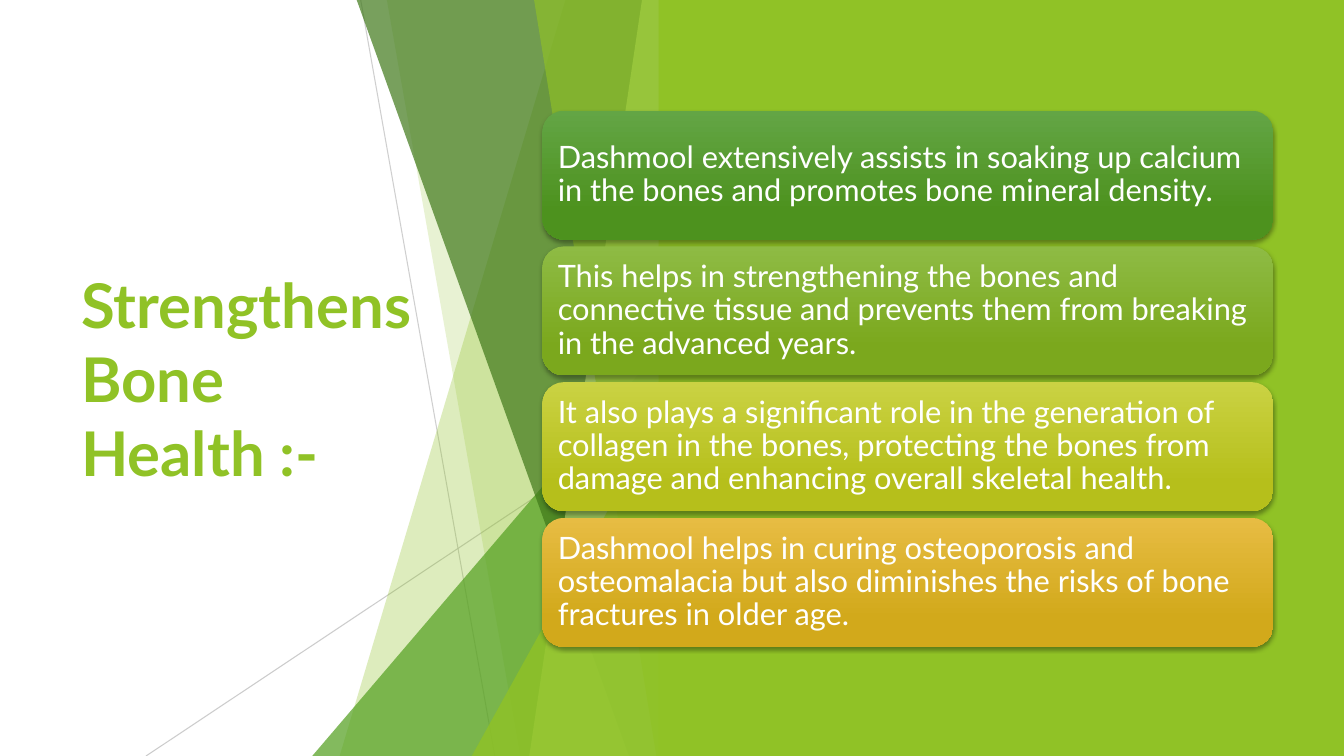
from lxml import etree
from pptx import Presentation
from pptx.dml.color import RGBColor
from pptx.enum.shapes import MSO_CONNECTOR, MSO_SHAPE
from pptx.enum.text import MSO_ANCHOR, PP_ALIGN
from pptx.oxml.ns import qn
from pptx.util import Cm, Pt

STRAIGHT = MSO_CONNECTOR.STRAIGHT
TRIANGLE = MSO_SHAPE.ISOSCELES_TRIANGLE
RECTANGLE = MSO_SHAPE.RECTANGLE
ROUNDED = MSO_SHAPE.ROUNDED_RECTANGLE
MIDDLE = MSO_ANCHOR.MIDDLE
LEFT = PP_ALIGN.LEFT
GREEN = "90C226"
WIDTH, HEIGHT = 33.87, 19.05
FACET_RIGHT = 16.92


def paint(color, value, shape=None, opacity=100):
    color.rgb = RGBColor.from_string(value)
    if opacity < 100:
        for element in shape.element.spPr.iter(qn("a:srgbClr")):
            etree.SubElement(element, qn("a:alpha"), val=str(opacity * 1000))


def write(shape, text, size, color, bold=False, spacing=1.0, margin=0.25):
    frame = shape.text_frame
    frame.word_wrap = True
    frame.vertical_anchor = MIDDLE
    frame.margin_left = frame.margin_right = Cm(margin)
    frame.margin_top = frame.margin_bottom = Cm(margin)
    paragraph = frame.paragraphs[0]
    paragraph.alignment = LEFT
    paragraph.line_spacing = spacing
    run = paragraph.add_run()
    run.text = text
    run.font.name = "Lato"
    run.font.size = Pt(size)
    run.font.bold = bold
    paint(run.font.color, color)


presentation = Presentation()
presentation.slide_width = Cm(WIDTH)
presentation.slide_height = Cm(HEIGHT)
slide = presentation.slides.add_slide(presentation.slide_layouts[6])
shapes = slide.shapes

title = shapes.add_textbox(Cm(1.8), Cm(3.84), Cm(9.86), Cm(11.38))
write(title, "Strengthens Bone Health :-", 44, GREEN, bold=True)

thin_lines = [
    (9.09, 0, 12.47, HEIGHT, 75),
    (FACET_RIGHT, 10.24, 3.68, HEIGHT, 80),
]
for start_x, start_y, end_x, end_y, opacity in thin_lines:
    line = shapes.add_connector(STRAIGHT, Cm(start_x), Cm(start_y), Cm(end_x), Cm(end_y))
    line.line.width = Pt(0.75)
    paint(line.line.color, "BFBFBF", line, opacity)
    etree.SubElement(line.element.spPr, qn("a:effectLst"))

facets = [
    (14.25, 0, 8.56, GREEN, 30),
    (9.75, 0, 13.11, GREEN, 20),
    (FACET_RIGHT, 8.46, 7.87, "54A021", 72),
    (8.99, 0, 15.85, "3F7819", 70),
    (16.18, 0, 13.34, "C0E474", 70),
    (13.46, 0, 16.54, GREEN, 65),
    (FACET_RIGHT, 9.98, 11.89, GREEN, 80),
]
for top_left, top, bottom_left, color, opacity in facets:
    if top:
        facet = shapes.add_shape(TRIANGLE, Cm(bottom_left), Cm(top),
                                 Cm(FACET_RIGHT - bottom_left), Cm(HEIGHT - top))
        facet.adjustments[0] = 1
    else:
        builder = shapes.build_freeform(Cm(top_left), 0)
        builder.add_line_segments([
            (Cm(FACET_RIGHT), 0),
            (Cm(FACET_RIGHT), Cm(HEIGHT)),
            (Cm(bottom_left), Cm(HEIGHT)),
        ], close=True)
        facet = builder.convert_to_shape()
    facet.shadow.inherit = False
    facet.line.fill.background()
    facet.fill.solid()
    paint(facet.fill.fore_color, color, facet, opacity)

panel = shapes.add_shape(RECTANGLE, Cm(16.6), 0, Cm(WIDTH - 16.6), Cm(HEIGHT))
panel.shadow.inherit = False
panel.line.fill.background()
panel.fill.solid()
paint(panel.fill.fore_color, GREEN)

cards = [
    ("Dashmool extensively assists in soaking up calcium in the bones and promotes "
     "bone mineral density.", "63A545", "4D921E"),
    ("This helps in strengthening the bones and connective tissue and prevents them "
     "from breaking in the advanced years.", "8EBB44", "7BA81D"),
    ("It also plays a significant role in the generation of collagen in the bones, "
     "protecting the bones from damage and enhancing overall skeletal health.",
     "CAD243", "B6BF1B"),
    ("Dashmool helps in curing osteoporosis and osteomalacia but also diminishes the "
     "risks of bone fractures in older age.", "E7BC43", "D2A91B"),
]
for index, (text, light, dark) in enumerate(cards):
    card = shapes.add_shape(ROUNDED, Cm(13.67), Cm(2.79 + 3.42 * index), Cm(18.42), Cm(3.25))
    card.line.fill.background()
    card.fill.gradient()
    card.fill.gradient_angle = 270
    for stop, position, color in zip(card.fill.gradient_stops, (0, 0.78), (light, dark)):
        stop.position = position
        paint(stop.color, color)
    card.shadow.inherit = False
    effects = card.element.spPr.find(qn("a:effectLst"))
    shadow = etree.SubElement(effects, qn("a:outerShdw"), blurRad=str(Pt(3)),
                              dist=str(Pt(2)), dir="5400000", rotWithShape="0")
    shade = etree.SubElement(shadow, qn("a:srgbClr"), val="000000")
    etree.SubElement(shade, qn("a:alpha"), val="35000")
    write(card, text, 22, "FFFFFF", spacing=0.9, margin=0.23)

presentation.save("out.pptx")
